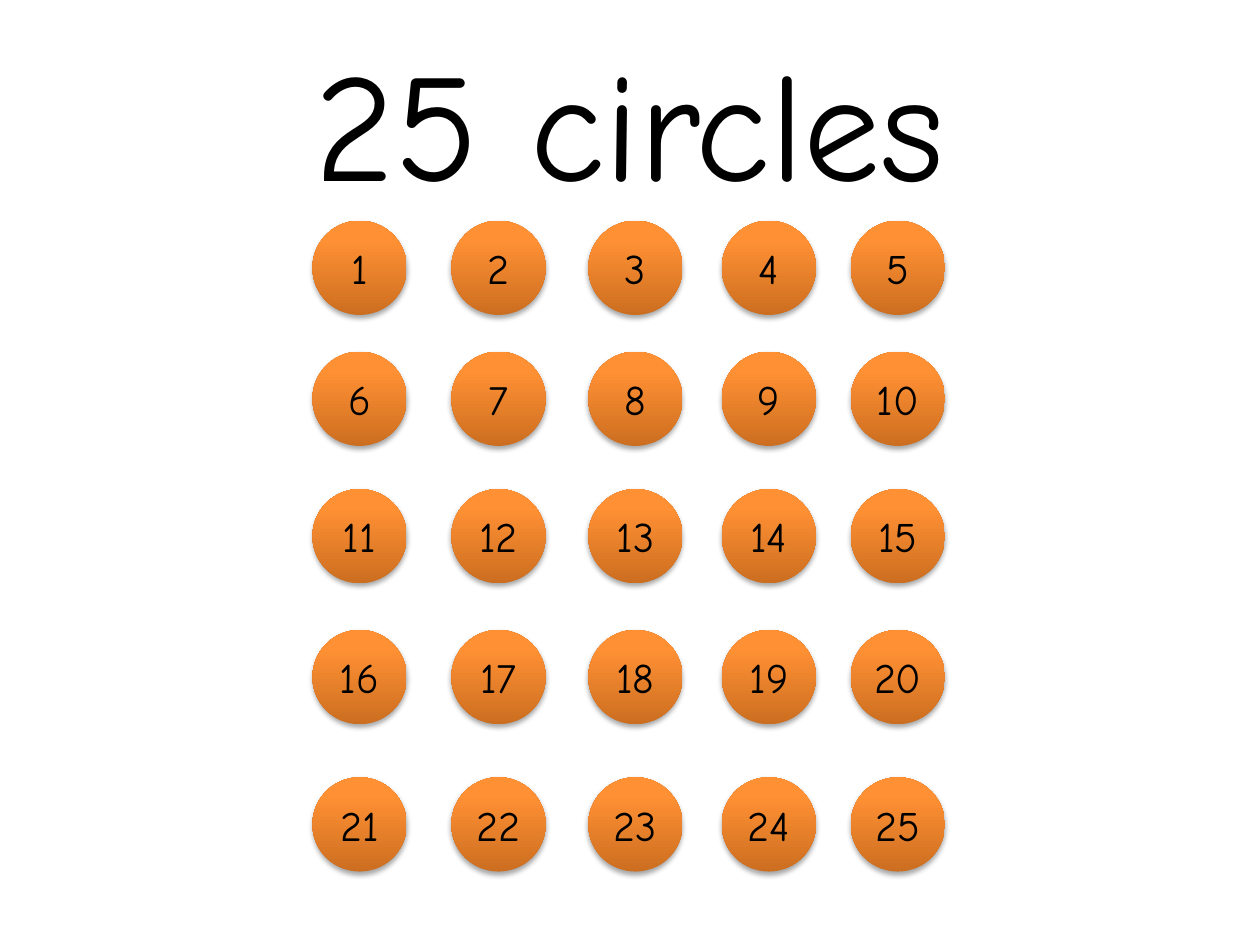
from pptx import Presentation
from pptx.dml.color import RGBColor
from pptx.enum.shapes import MSO_SHAPE
from pptx.enum.text import MSO_AUTO_SIZE, PP_ALIGN
from pptx.oxml import parse_xml
from pptx.oxml.ns import nsdecls
from pptx.util import Cm, Pt

OVAL = MSO_SHAPE.OVAL
CENTER = PP_ALIGN.CENTER
GROW = MSO_AUTO_SIZE.SHAPE_TO_FIT_TEXT

BLACK = RGBColor(0x00, 0x00, 0x00)
DARK_ORANGE = RGBColor(0xCC, 0x6E, 0x20)
ORANGE = RGBColor(0xFF, 0x90, 0x34)
LIGHT_ORANGE = RGBColor(0xFF, 0x91, 0x36)

# Grid of circles, in cm
COLUMNS = [6.3, 9.1, 11.86, 14.55, 17.15]
ROWS = [4.45, 7.09, 9.86, 12.7, 15.67]
DIAMETER = 1.9
LABEL_W, LABEL_H = 1.58, 1.27


class Board:
    font = "Comic Neue"
    stops = [(0, DARK_ORANGE), (80, ORANGE), (100, LIGHT_ORANGE)]

    def __init__(self, slide):
        self.slide = slide

    def text(self, text, x, y, w, h, size):
        sp = self.slide.shapes.add_textbox(Cm(x), Cm(y), Cm(w), Cm(h))
        tf = sp.text_frame
        tf.word_wrap = True
        tf.auto_size = GROW
        tf.text = text
        p = tf.paragraphs[0]
        p.alignment = CENTER
        r = p.runs[0]
        r.font.name = self.font
        r.font.size = Pt(size)
        r.font.color.rgb = BLACK

    def circle(self, x, y, d):
        sp = self.slide.shapes.add_shape(OVAL, Cm(x), Cm(y), Cm(d), Cm(d))
        props = sp.element.spPr
        # Three-stop gradient, dark at the bottom
        stops = "".join(
            f'<a:gs pos="{pos * 1000}"><a:srgbClr val="{color}"/></a:gs>'
            for pos, color in self.stops)
        props.append(parse_xml(
            f'<a:gradFill {nsdecls("a")} rotWithShape="1"><a:gsLst>{stops}</a:gsLst>'
            '<a:lin ang="16200000" scaled="0"/></a:gradFill>'))
        sp.line.fill.background()
        # Soft shadow below
        props.append(parse_xml(
            f'<a:effectLst {nsdecls("a")}><a:outerShdw blurRad="{Pt(3.1)}" '
            f'dist="{Pt(1.8)}" dir="5400000" rotWithShape="0">'
            f'<a:srgbClr val="{BLACK}"><a:alpha val="35000"/></a:srgbClr>'
            '</a:outerShdw></a:effectLst>'))

    def numbered_circle(self, number, x, y):
        self.circle(x, y, DIAMETER)
        self.text(str(number), x + (DIAMETER - LABEL_W) / 2,
                  y + (DIAMETER - LABEL_H) / 2, LABEL_W, LABEL_H, 24)


def main():
    prs = Presentation()
    prs.slide_width, prs.slide_height = Cm(25.4), Cm(19.05)
    board = Board(prs.slides.add_slide(prs.slide_layouts[6]))

    # Title
    board.text("25 circles", 0, 0.43, 25.4, 4.01, 88)

    # Numbered circles, row by row
    for row, y in enumerate(ROWS):
        for col, x in enumerate(COLUMNS):
            board.numbered_circle(row * len(COLUMNS) + col + 1, x, y)

    prs.save("out.pptx")


if __name__ == "__main__":
    main()
